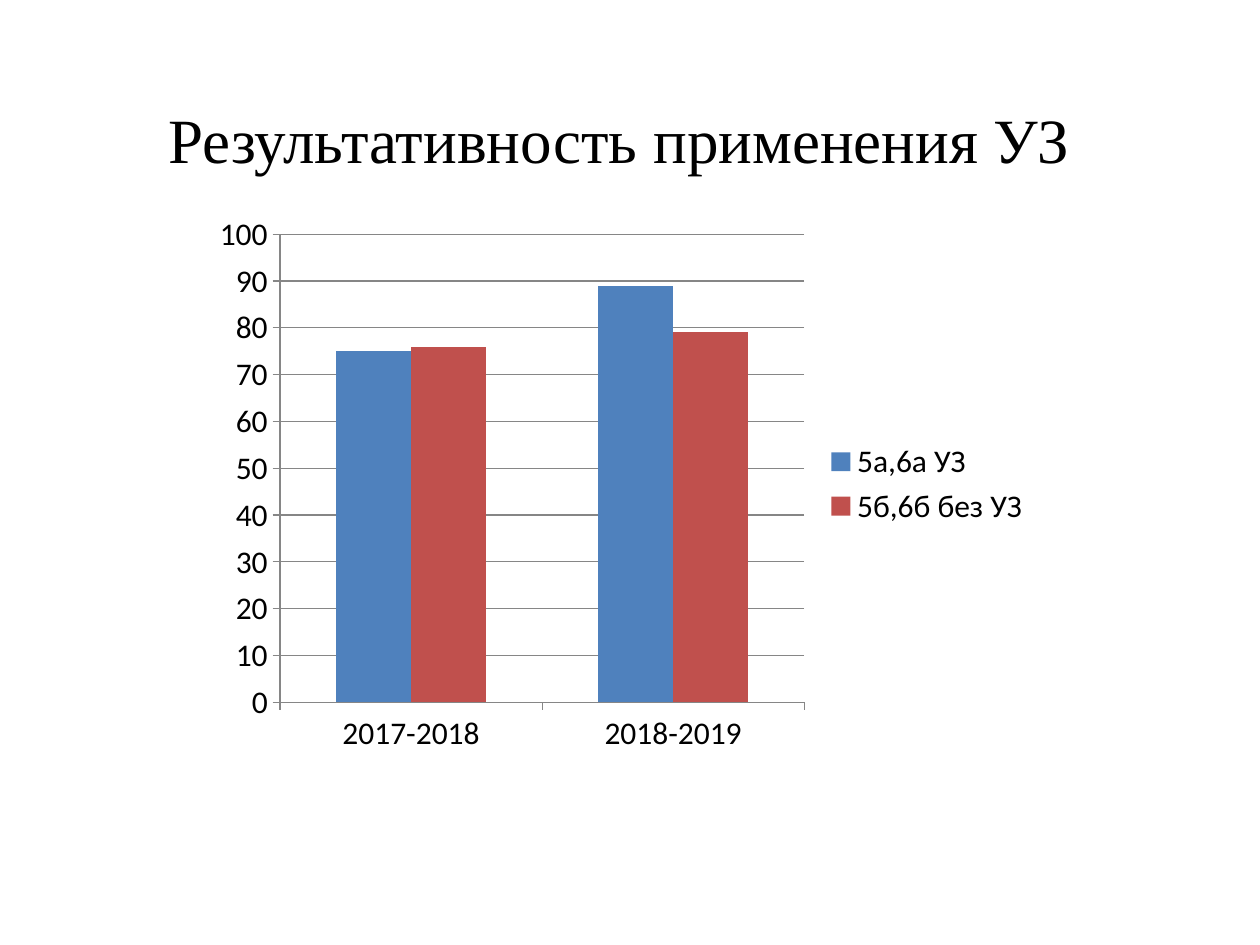
from dataclasses import dataclass

from pptx import Presentation
from pptx.chart.data import CategoryChartData
from pptx.dml.color import RGBColor
from pptx.enum.chart import XL_CHART_TYPE, XL_LEGEND_POSITION, XL_TICK_MARK
from pptx.enum.text import MSO_ANCHOR, PP_ALIGN
from pptx.util import Emu, Pt


@dataclass(frozen=True)
class Theme:
    text: RGBColor = RGBColor(0x00, 0x00, 0x00)
    axis: RGBColor = RGBColor(0x86, 0x86, 0x86)
    series: tuple = (RGBColor(0x4F, 0x81, 0xBD), RGBColor(0xC0, 0x50, 0x4D))
    title_font: str = "Times New Roman"
    chart_font: str = "Calibri"
    title_size: Pt = Pt(36)
    chart_size: Pt = Pt(18)
    line_width: Pt = Pt(0.75)


def px(length):
    return Emu(round(length * 914400 / 126))


theme = Theme()
deck = Presentation()
deck.slide_width, deck.slide_height = px(1260), px(945)
page = deck.slides.add_slide(deck.slide_layouts[6])

# Title
title_box = page.shapes.add_textbox(px(44), px(37), px(1150), px(203))
frame = title_box.text_frame
frame.word_wrap = True
frame.vertical_anchor = MSO_ANCHOR.MIDDLE
paragraph = frame.paragraphs[0]
paragraph.text = "Результативность применения УЗ"
paragraph.alignment = PP_ALIGN.CENTER
paragraph.font.name = theme.title_font
paragraph.font.size = theme.title_size
paragraph.font.color.rgb = theme.text

# Results by school year
results = CategoryChartData()
results.categories = ["2017-2018", "2018-2019"]
results.add_series("5а,6а УЗ", (75, 89))
results.add_series("5б,6б без УЗ", (76, 79))
chart = page.shapes.add_chart(
    XL_CHART_TYPE.COLUMN_CLUSTERED, px(203), px(204), px(840), px(560), results
).chart
chart.has_title = False
chart.font.name = theme.chart_font
chart.font.size = theme.chart_size
chart.font.color.rgb = theme.text

# Columns
plot = chart.plots[0]
plot.vary_by_categories = False
plot.gap_width = 150
plot.overlap = 0
for series, color in zip(plot.series, theme.series):
    series.format.fill.solid()
    series.format.fill.fore_color.rgb = color

# Axes and gridlines
value_axis = chart.value_axis
value_axis.minimum_scale = 0
value_axis.maximum_scale = 100
value_axis.major_unit = 10
value_axis.has_major_gridlines = True
for axis in (chart.category_axis, value_axis):
    axis.major_tick_mark = XL_TICK_MARK.OUTSIDE
    axis.minor_tick_mark = XL_TICK_MARK.NONE
for part in (chart.category_axis, value_axis, value_axis.major_gridlines):
    part.format.line.color.rgb = theme.axis
    part.format.line.width = theme.line_width

# Legend
chart.has_legend = True
chart.legend.position = XL_LEGEND_POSITION.RIGHT
chart.legend.include_in_layout = False

deck.save("out.pptx")
